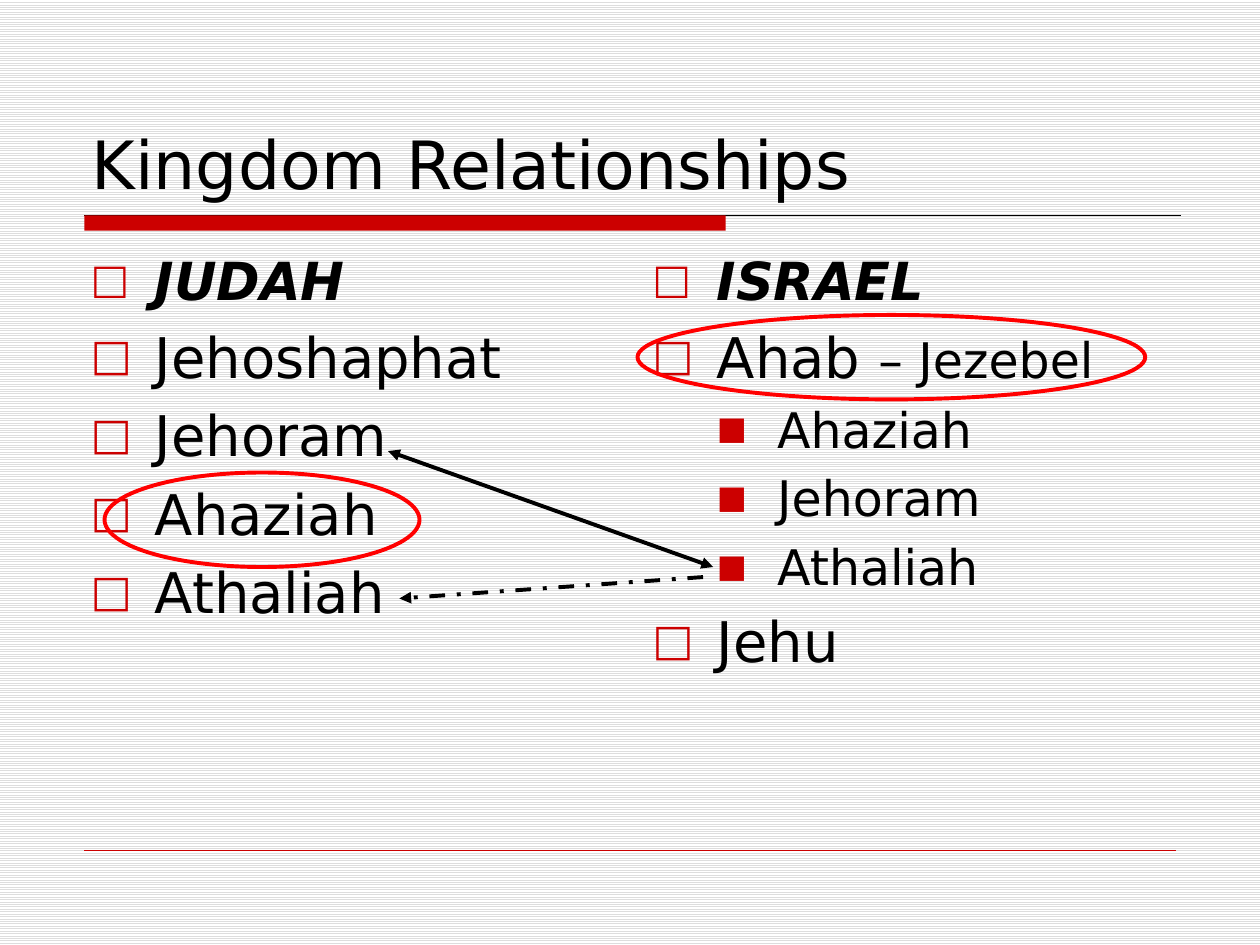
from lxml import etree
from pptx import Presentation
from pptx import util as u
from pptx.dml.color import RGBColor
from pptx.enum import dml, shapes, text
from pptx.oxml.ns import qn

FONT = "DejaVu Sans"
WIDTH, HEIGHT = 10, 7.5
LEFT, RIGHT = 0.67, 9.37
BLACK, RED, BRIGHT_RED = "000000", "CC0000", "FF0000"

# Bullet character, size in percent, left margin and hanging indent per level
BULLETS = [("□", 78, 0.51, 0.51), ("■", 65, 0.99, 0.48)]

# Each entry: level, then runs of (words, size)
JUDAH = [(0, [(name, 32)])
         for name in ("Jehoshaphat", "Jehoram", "Ahaziah", "Athaliah")]
ISRAEL = [
    (0, [("Ahab ", 32), ("– Jezebel", 28)]),
    *[(1, [(name, 28)]) for name in ("Ahaziah", "Jehoram", "Athaliah")],
    (0, [("Jehu", 32)]),
]


def color(value):
    return RGBColor.from_string(value)


def add_child(parent, tag, **attributes):
    return etree.SubElement(parent, qn(tag), attributes)


def set_background(slide):
    fill = slide.background.fill
    fill.patterned()
    fill.pattern = dml.MSO_PATTERN.LIGHT_HORIZONTAL
    fill.fore_color.rgb = color("DDDDDD")
    fill.back_color.rgb = color("FFFFFF")


def add_frame(slide, left, top, width, height, anchor):
    box = slide.shapes.add_textbox(*map(u.Inches, (left, top, width, height)))
    frame = box.text_frame
    frame.word_wrap = True
    frame.vertical_anchor = anchor
    return frame


def set_font(font, size):
    font.name = FONT
    font.size = u.Pt(size)
    font.color.rgb = color(BLACK)


def add_title(slide, words):
    frame = add_frame(slide, 0.63, 0.33, 8.75, 1.33, text.MSO_ANCHOR.BOTTOM)
    paragraph = frame.paragraphs[0]
    paragraph.add_run().text = words
    set_font(paragraph.font, 38)


def set_bullet(paragraph, level):
    character, percent, margin, hanging = BULLETS[level]
    paragraph.level = level
    properties = paragraph._p.get_or_add_pPr()
    properties.set("marL", str(u.Inches(margin)))
    properties.set("indent", str(-u.Inches(hanging)))
    bullet_color = add_child(properties, "a:buClr")
    add_child(bullet_color, "a:srgbClr", val=RED)
    add_child(properties, "a:buSzPct", val=str(percent * 1000))
    add_child(properties, "a:buFont", typeface=FONT)
    add_child(properties, "a:buChar", char=character)


def add_item(paragraph, level, runs):
    size = runs[0][1]
    paragraph.space_before = u.Pt(round(0.2 * size, 1))
    set_bullet(paragraph, level)
    for words, run_size in runs:
        run = paragraph.add_run()
        run.text = words
        if run_size != size:
            run.font.size = u.Pt(run_size)
    set_font(paragraph.font, size)


def add_list(slide, left, heading, items):
    frame = add_frame(slide, left, 1.92, 4.29, 4.67, text.MSO_ANCHOR.TOP)
    first = frame.paragraphs[0]
    add_item(first, 0, [(heading, 30)])
    first.font.bold = first.font.italic = True
    for level, runs in items:
        add_item(frame.add_paragraph(), level, runs)


def add_line(slide, start, end, line_color, width, dash=None, arrows=()):
    connector = slide.shapes.add_connector(
        shapes.MSO_CONNECTOR.STRAIGHT, *map(u.Inches, (*start, *end)))
    connector.line.color.rgb = color(line_color)
    connector.line.width = u.Pt(width)
    if dash:
        connector.line.dash_style = dash
    properties = connector._element.spPr
    for arrow in arrows:
        add_child(properties.find(qn("a:ln")), arrow, type="triangle")
    add_child(properties, "a:effectLst")


def add_bar(slide, left, top, width, height):
    bar = slide.shapes.add_shape(
        shapes.MSO_SHAPE.RECTANGLE, *map(u.Inches, (left, top, width, height)))
    bar.shadow.inherit = False
    bar.fill.solid()
    bar.fill.fore_color.rgb = color(RED)
    bar.line.fill.background()


def add_ring(slide, left, top, width, height):
    ring = slide.shapes.add_shape(
        shapes.MSO_SHAPE.OVAL, *map(u.Inches, (left, top, width, height)))
    ring.shadow.inherit = False
    ring.fill.background()
    ring.line.color.rgb = color(BRIGHT_RED)
    ring.line.width = u.Pt(2.25)


def main():
    presentation = Presentation()
    presentation.slide_width = u.Inches(WIDTH)
    presentation.slide_height = u.Inches(HEIGHT)
    slide = presentation.slides.add_slide(presentation.slide_layouts[6])
    set_background(slide)

    # Rules under the title and at the foot
    add_line(slide, (LEFT, 1.71), (RIGHT, 1.71), BLACK, 0.75)
    add_bar(slide, LEFT, 1.71, 5.09, 0.12)
    add_line(slide, (LEFT, 6.75), (WIDTH - LEFT, 6.75), RED, 0.25)

    # Title and the two lists
    add_title(slide, "Kingdom Relationships")
    add_list(slide, 0.62, "JUDAH", JUDAH)
    add_list(slide, 5.08, "ISRAEL", ISRAEL)

    # Arrows between the lists
    add_line(slide, (3.08, 3.58), (5.66, 4.5), BLACK, 2.25,
             arrows=("a:headEnd", "a:tailEnd"))
    add_line(slide, (5.58, 4.58), (3.17, 4.75), BLACK, 2.25,
             dash=dml.MSO_LINE.DASH_DOT, arrows=("a:tailEnd",))

    # Rings around two entries
    add_ring(slide, 0.83, 3.75, 2.5, 0.75)
    add_ring(slide, 5.06, 2.5, 4.03, 0.67)

    presentation.save("out.pptx")


if __name__ == "__main__":
    main()
